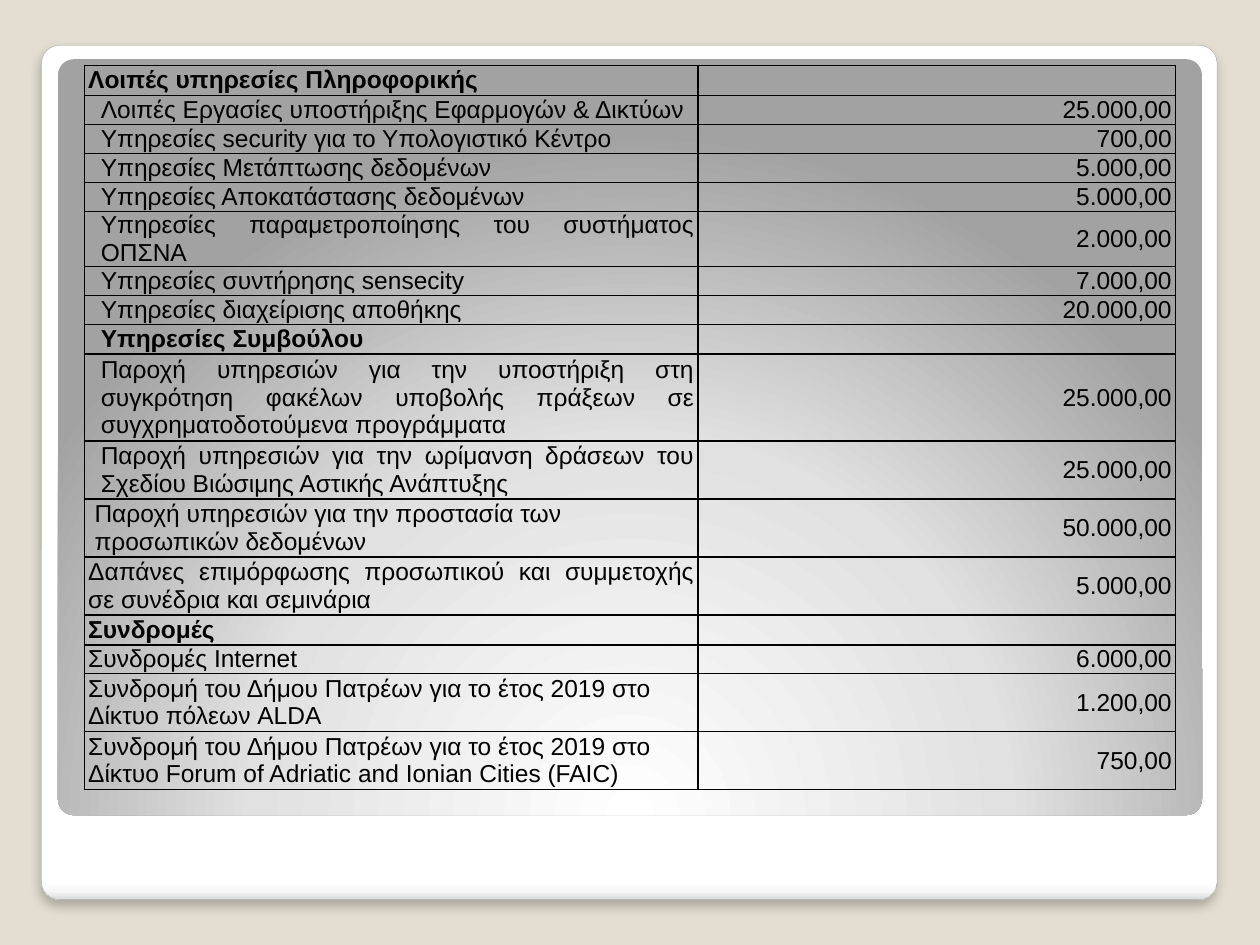
from dataclasses import dataclass

from lxml import etree
from pptx import Presentation
from pptx import util as u
from pptx.dml.color import RGBColor
from pptx.enum import shapes, text
from pptx.oxml import parse_xml
from pptx.oxml.ns import nsdecls, qn


@dataclass(frozen=True)
class Theme:
    background: str = "E3DED1"
    ink: str = "000000"
    frame_line: str = "A4A4A4"
    frame_stops: tuple = ((0, "FFFFFF"), (98, "FFFFFF"), (99, "F7F7F7"), (100, "DADADA"))
    panel_stops: tuple = ((0, "FFFFFF"), (55, "E1E1E1"), (100, "A2A2A2"))
    font: str = "Arial"
    size: int = 14
    border: float = 1
    line_height: float = 0.23


LINEAR = '<a:lin ang="5400000" scaled="0"/>'
RADIAL = ('<a:path path="circle"><a:fillToRect l="50000" t="175000" '
          'r="50000" b="-75000"/></a:path>')

JUSTIFY, LEFT, RIGHT = text.PP_ALIGN.JUSTIFY, text.PP_ALIGN.LEFT, text.PP_ALIGN.RIGHT

# Label, amount, lines of text, left indent, alignment; a row without amount is a heading
ROWS = [
    ("Λοιπές υπηρεσίες Πληροφορικής ", "", 1, 0, JUSTIFY),
    ("Λοιπές Εργασίες υποστήριξης Εφαρμογών & Δικτύων", "25.000,00", 1, 0.1, JUSTIFY),
    ("Υπηρεσίες security για το Υπολογιστικό Κέντρο", "700,00", 1, 0.1, JUSTIFY),
    ("Υπηρεσίες Μετάπτωσης δεδομένων", "5.000,00", 1, 0.1, JUSTIFY),
    ("Υπηρεσίες Αποκατάστασης δεδομένων", "5.000,00", 1, 0.1, JUSTIFY),
    # This row starts one line high and grows with its text
    ("Υπηρεσίες παραμετροποίησης του συστήματος ΟΠΣΝΑ", "2.000,00", 1, 0.1, JUSTIFY),
    ("Υπηρεσίες συντήρησης sensecity", "7.000,00", 1, 0.1, JUSTIFY),
    ("Υπηρεσίες διαχείρισης αποθήκης", "20.000,00", 1, 0.1, JUSTIFY),
    ("Υπηρεσίες Συμβούλου", "", 1, 0.1, JUSTIFY),
    ("Παροχή υπηρεσιών για την υποστήριξη στη συγκρότηση φακέλων υποβολής πράξεων "
     "σε συγχρηματοδοτούμενα προγράμματα", "25.000,00", 3, 0.1, JUSTIFY),
    ("Παροχή υπηρεσιών για την ωρίμανση δράσεων του Σχεδίου Βιώσιμης Αστικής Ανάπτυξης",
     "25.000,00", 2, 0.1, JUSTIFY),
    ("Παροχή υπηρεσιών για την προστασία των προσωπικών δεδομένων",
     "50.000,00", 2, 0.05, LEFT),
    ("Δαπάνες επιμόρφωσης προσωπικού και συμμετοχής σε συνέδρια και σεμινάρια",
     "5.000,00", 2, 0, JUSTIFY),
    ("Συνδρομές", "", 1, 0, JUSTIFY),
    ("Συνδρομές Internet", "6.000,00", 1, 0, JUSTIFY),
    ("Συνδρομή του Δήμου Πατρέων για το έτος 2019 στο Δίκτυο πόλεων ALDA",
     "1.200,00", 2, 0, LEFT),
    ("Συνδρομή του Δήμου Πατρέων για το έτος 2019 στο Δίκτυο Forum of Adriatic and "
     "Ionian Cities (FAIC)", "750,00", 2, 0, LEFT),
]


class SlideBuilder:
    def __init__(self, s, theme):
        self.s, self.theme = s, theme

    def background(self):
        fill = self.s.background.fill
        fill.solid()
        fill.fore_color.rgb = RGBColor.from_string(self.theme.background)

    def rounded_panel(self, left, top, width, height, stops, direction):
        sp = self.s.shapes.add_shape(
            shapes.MSO_SHAPE.ROUNDED_RECTANGLE,
            u.Inches(left), u.Inches(top), u.Inches(width), u.Inches(height))
        sp.adjustments[0] = 0.021
        sp.shadow.inherit = False
        sp.line.fill.background()
        marks = "".join(f'<a:gs pos="{pos * 1000}"><a:srgbClr val="{color}"/></a:gs>'
                        for pos, color in stops)
        gradient = parse_xml(f'<a:gradFill {nsdecls("a")} rotWithShape="1">'
                             f'<a:gsLst>{marks}</a:gsLst>{direction}</a:gradFill>')
        sp._element.spPr.find(qn("a:prstGeom")).addnext(gradient)
        return sp

    def outline(self, sp, color, width):
        sp.line.color.rgb = RGBColor.from_string(color)
        sp.line.width = u.Pt(width)

    def drop_shadow(self, sp):
        sp._element.spPr.find(qn("a:effectLst")).append(parse_xml(
            f'<a:outerShdw {nsdecls("a")} blurRad="{u.Pt(6)}" dist="{u.Pt(4)}" '
            f'dir="5400000" algn="t" rotWithShape="0"><a:srgbClr val="{self.theme.ink}">'
            '<a:alpha val="25000"/></a:srgbClr></a:outerShdw>'))

    def cell(self, cell, content, align, indent=0, bold=False):
        cell.vertical_anchor = text.MSO_ANCHOR.MIDDLE
        cell.margin_left = cell.margin_right = u.Inches(0.03)
        cell.margin_top = cell.margin_bottom = 0
        cell.fill.background()
        tc_pr = cell._tc.get_or_add_tcPr()
        for i, side in enumerate(("lnL", "lnR", "lnT", "lnB")):
            tc_pr.insert(i, parse_xml(
                f'<a:{side} {nsdecls("a")} w="{u.Pt(self.theme.border)}"><a:solidFill>'
                f'<a:srgbClr val="{self.theme.ink}"/></a:solidFill></a:{side}>'))
        p = cell.text_frame.paragraphs[0]
        p.alignment = align
        if not content:
            # Keep empty cells from growing to the default type size
            etree.SubElement(p._p, qn("a:endParaRPr"), sz=str(self.theme.size * 100))
            return
        if indent:
            p._p.get_or_add_pPr().set("marL", str(u.Inches(indent)))
        r = p.add_run()
        r.text = content
        r.font.name = self.theme.font
        r.font.size = u.Pt(self.theme.size)
        r.font.bold = bold
        r.font.color.rgb = RGBColor.from_string(self.theme.ink)

    def budget_table(self, left, top, widths, rows):
        line = self.theme.line_height
        height = line * sum(row[2] for row in rows)
        table = self.s.shapes.add_table(
            len(rows), len(widths), u.Inches(left), u.Inches(top),
            u.Inches(sum(widths)), u.Inches(height)).table
        table.first_row = table.horz_banding = False
        for column, width in zip(table.columns, widths):
            column.width = u.Inches(width)
        for i, (label, amount, lines, indent, align) in enumerate(rows):
            table.rows[i].height = u.Inches(line * lines)
            self.cell(table.cell(i, 0), label, align, indent, bold=not amount)
            self.cell(table.cell(i, 1), amount, RIGHT)


def main():
    prs = Presentation()
    prs.slide_width, prs.slide_height = u.Inches(10), u.Inches(7.5)
    theme = Theme()
    builder = SlideBuilder(prs.slides.add_slide(prs.slide_layouts[6]), theme)

    # Backdrop: white frame and grey panel
    builder.background()
    frame = builder.rounded_panel(0.33, 0.36, 9.33, 6.78, theme.frame_stops, LINEAR)
    builder.outline(frame, theme.frame_line, 0.16)
    builder.drop_shadow(frame)
    builder.rounded_panel(0.46, 0.47, 9.08, 6, theme.panel_stops, RADIAL)

    # Budget lines
    builder.budget_table(0.67, 0.52, (4.87, 3.79), ROWS)

    prs.save("out.pptx")


if __name__ == "__main__":
    main()
